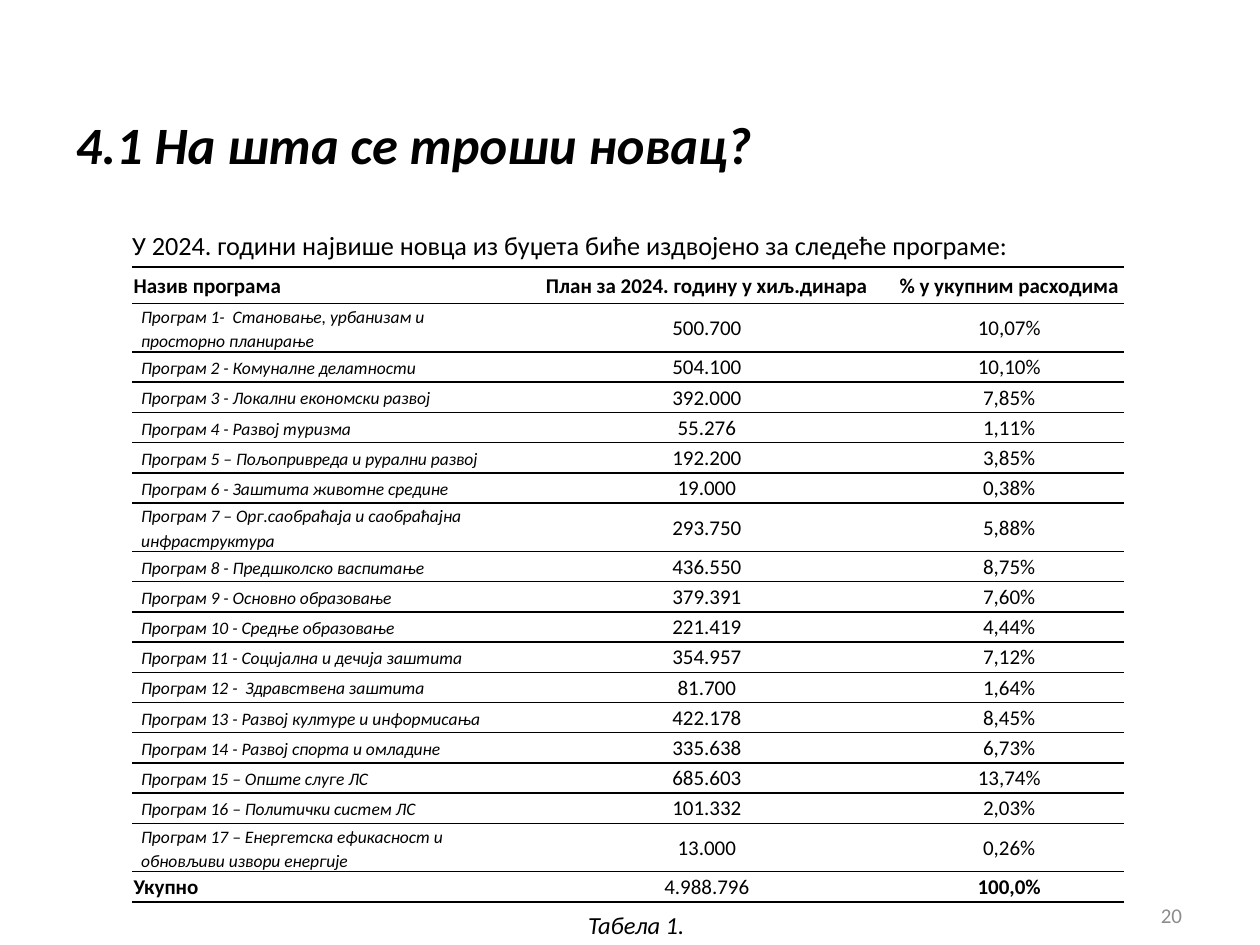
from lxml.etree import SubElement
from pptx import Presentation
from pptx.dml.color import RGBColor
from pptx.enum.text import MSO_ANCHOR as ANCHOR, PP_ALIGN as ALIGN
from pptx.oxml.ns import qn
from pptx.util import Inches, Pt

COLORS = {"text": "000000", "number": "8C8C8C"}
HEADERS = ("Назив програма", "План за 2024. годину у хиљ.динара", "% у укупним расходима")
PROGRAMS = (
    ("Програм 1-  Становање, урбанизам и просторно планирање", "500.700", "10,07%"),
    ("Програм 2 - Комуналне делатности", "504.100", "10,10%"),
    ("Програм 3 - Локални економски развој", "392.000", "7,85%"),
    ("Програм 4 - Развој туризма", "55.276", "1,11%"),
    ("Програм 5 – Пољопривреда и рурални развој", "192.200", "3,85%"),
    ("Програм 6 - Заштита животне средине", "19.000", "0,38%"),
    ("Програм 7 – Орг.саобраћаја и саобраћајна инфраструктура", "293.750", "5,88%"),
    ("Програм 8 - Предшколско васпитање", "436.550", "8,75%"),
    ("Програм 9 - Основно образовање", "379.391", "7,60%"),
    ("Програм 10 - Средње образовање", "221.419", "4,44%"),
    ("Програм 11 - Социјална и дечија заштита", "354.957", "7,12%"),
    ("Програм 12 -  Здравствена заштита", "81.700", "1,64%"),
    ("Програм 13 - Развој културе и информисања", "422.178", "8,45%"),
    ("Програм 14 - Развој спорта и омладине", "335.638", "6,73%"),
    ("Програм 15 – Опште слуге ЛС", "685.603", "13,74%"),
    ("Програм 16 – Политички систем ЛС", "101.332", "2,03%"),
    ("Програм 17 – Енергетска ефикасност и обновљиви извори енергије", "13.000", "0,26%"),
)
TOTAL = ("Укупно", "4.988.796", "100,0%")
COLUMN_WIDTHS = (3.07, 2.98, 1.82)
HEADER_HEIGHT, ROW_HEIGHT = 0.29, 0.24


def write(tf, text, size=12, color="text", bold=False, italic=False,
          align=ALIGN.LEFT, spacing=None):
    """Put one formatted paragraph into a text frame."""
    p = tf.paragraphs[0]
    p.alignment = align
    if spacing:
        p.line_spacing = spacing
    r = p.add_run()
    r.text = text
    r.font.name = "Calibri"
    r.font.size = Pt(size)
    r.font.bold = bold
    r.font.italic = italic
    r.font.color.rgb = RGBColor.from_string(COLORS[color])


def add_title(s, text):
    """Move and fill the title placeholder."""
    sp = s.shapes.title
    sp.left, sp.top, sp.width, sp.height = map(Inches, (0.5, 0.62, 7.27, 1.04))
    sp.text_frame.vertical_anchor = ANCHOR.MIDDLE
    write(sp.text_frame, text, size=30, bold=True, italic=True)


def add_text(s, text, box, anchor=ANCHOR.TOP, wrap=True, **style):
    """Add a text box at the given left, top, width and height."""
    tf = s.shapes.add_textbox(*map(Inches, box)).text_frame
    tf.word_wrap = wrap
    tf.vertical_anchor = anchor
    write(tf, text, **style)


def set_borders(cell):
    """Rule a cell above and below and leave its sides open."""
    tcPr = cell._tc.get_or_add_tcPr()
    for side in ("lnL", "lnR"):
        SubElement(SubElement(tcPr, qn(f"a:{side}"), w="0"), qn("a:noFill"))
    for side in ("lnT", "lnB"):
        ln = SubElement(tcPr, qn(f"a:{side}"), w=str(Pt(1)))
        SubElement(SubElement(ln, qn("a:solidFill")), qn("a:srgbClr"), val=COLORS["text"])


def fill_cell(cell, text, side=0.01, top=0.01, **style):
    """Write a cell and set its margins, borders and empty fill."""
    cell.margin_left = cell.margin_right = Inches(side)
    cell.margin_top, cell.margin_bottom = Inches(top), 0
    cell.vertical_anchor = ANCHOR.MIDDLE
    set_borders(cell)
    cell.fill.background()
    write(cell.text_frame, text, **style)


def add_budget_table(s):
    """Add the table of programs with its header and total rows."""
    rows = (HEADERS, *PROGRAMS, TOTAL)
    height = HEADER_HEIGHT + ROW_HEIGHT * (len(rows) - 1)
    table = s.shapes.add_table(len(rows), len(HEADERS), Inches(1.05), Inches(2.12),
                               Inches(sum(COLUMN_WIDTHS)), Inches(height)).table
    table.first_row = table.horz_banding = False
    for column, width in zip(table.columns, COLUMN_WIDTHS):
        column.width = Inches(width)
    for i, (row, values) in enumerate(zip(table.rows, rows)):
        row.height = Inches(ROW_HEIGHT if i else HEADER_HEIGHT)
        for j, (cell, text) in enumerate(zip(row.cells, values)):
            if values in PROGRAMS and j == 0:
                fill_cell(cell, text, side=0.07, top=0, size=10, italic=True, spacing=1.15)
            else:
                bold = values is HEADERS or (values is TOTAL and j != 1)
                fill_cell(cell, text, bold=bold, align=ALIGN.CENTER if j else ALIGN.LEFT)


def main():
    """Build the slide and save it."""
    prs = Presentation()
    prs.slide_width, prs.slide_height = Inches(10), Inches(7.5)
    s = prs.slides.add_slide(prs.slide_layouts[5])
    add_title(s, "4.1 На шта се троши новац?")
    add_text(s, "У 2024. години највише новца из буџета биће издвојено за следеће програме:",
             (0.95, 1.77, 8.06, 0.79), size=15, align=ALIGN.JUSTIFY)
    add_budget_table(s)
    add_text(s, "Табела 1.", (4.57, 7.17, 1.04, 0.34), wrap=False, size=14, italic=True)
    add_text(s, "20", (7.15, 7.06, 2.33, 0.4), anchor=ANCHOR.MIDDLE, color="number",
             align=ALIGN.RIGHT)
    prs.save("out.pptx")


if __name__ == "__main__":
    main()
